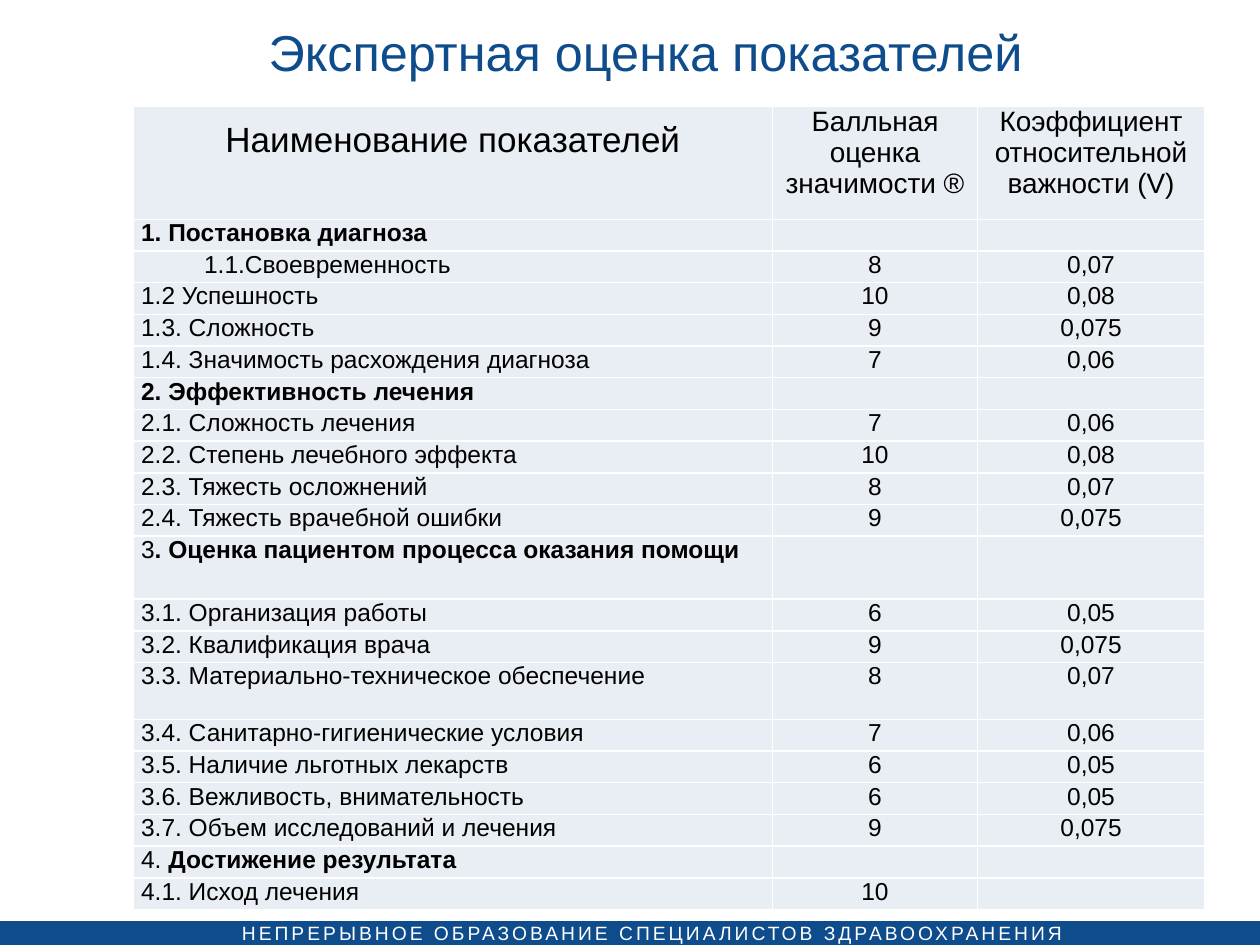
import dataclasses

import pptx
import pptx.dml.color
import pptx.enum.shapes
import pptx.enum.text
import pptx.oxml
import pptx.oxml.ns
import pptx.util

ALIGN = pptx.enum.text.PP_ALIGN
MID = pptx.enum.text.MSO_ANCHOR.MIDDLE
BLUE, WHITE, BLACK, PALE = "0F4C8B", "FFFFFF", "000000", "E9EDF4"

# Page grid: 1000 columns by 750 rows
COLS, ROWS = 1000, 750
deck = pptx.Presentation()
deck.slide_width = pptx.util.Inches(10)
deck.slide_height = pptx.util.Inches(7.5)


def col(n: float) -> int:
    return round(deck.slide_width * n / COLS)


def row(n: float) -> int:
    return round(deck.slide_height * n / ROWS)


def box(x: float, y: float, w: float, h: float) -> tuple[int, int, int, int]:
    return col(x), row(y), col(w), row(h)


def tint(code: str) -> pptx.dml.color.RGBColor:
    return pptx.dml.color.RGBColor.from_string(code)


def fill(part, code: str) -> None:
    part.fill.solid()
    part.fill.fore_color.rgb = tint(code)


def apply(part, form: dict) -> None:
    for key, val in form.items():
        setattr(part, key, val)


def write(para, text: str, size: float, code: str = BLACK, bold: bool = False):
    run = para.add_run()
    run.text = text
    apply(run.font, {"name": "Arial", "size": pptx.util.Pt(size), "bold": bold})
    run.font.color.rgb = tint(code)
    return run


@dataclasses.dataclass
class Line:
    """One table row: plain text, bold text, score, weight."""
    plain: str = ""
    bold: str = ""
    score: str = ""
    weight: str = ""
    tall: float = 0
    indent: float = 0


HEADS = [("Наименование показателей", 20, 12),
         ("Балльная оценка значимости ®", 16, 0),
         ("Коэффициент относительной важности (V)", 16, 0)]
LINES = [
    Line(bold="1. Постановка диагноза"),
    Line("1.1.Своевременность", "", "8", "0,07", indent=50),
    Line("1.2 Успешность", "", "10", "0,08"),
    Line("1.3. Сложность", "", "9", "0,075"),
    Line("1.4. Значимость расхождения диагноза", "", "7", "0,06"),
    Line(bold="2. Эффективность лечения"),
    Line("2.1. Сложность лечения", "", "7", "0,06"),
    Line("2.2. Степень лечебного эффекта", "", "10", "0,08"),
    Line("2.3. Тяжесть осложнений", "", "8", "0,07"),
    Line("2.4. Тяжесть врачебной ошибки", "", "9", "0,075"),
    Line("3", ". Оценка пациентом процесса оказания помощи", tall=50),
    Line("3.1. Организация работы", "", "6", "0,05"),
    Line("3.2. Квалификация врача", "", "9", "0,075"),
    Line("3.3. Материально-техническое обеспечение", "", "8", "0,07", tall=45),
    Line("3.4. Санитарно-гигиенические условия", "", "7", "0,06"),
    Line("3.5. Наличие льготных лекарств", "", "6", "0,05"),
    Line("3.6. Вежливость, внимательность", "", "6", "0,05"),
    Line("3.7. Объем исследований и лечения", "", "9", "0,075"),
    Line("4. ", "Достижение результата"),
    Line("4.1. Исход лечения", "", "10"),
]
WIDTHS = [507, 163, 180]
HIGH, HEAD = 638, 90


def style(cell, top: float = 0) -> None:
    """Set insets, white borders and the pale fill of a cell."""
    apply(cell, {"margin_left": col(6), "margin_right": col(6),
                 "margin_top": row(top), "margin_bottom": 0})
    props = cell._tc.get_or_add_tcPr()
    space = pptx.oxml.ns.nsdecls("a")
    for side in "LRTB":
        props.append(pptx.oxml.parse_xml(
            f'<a:ln{side} {space} w="12700"><a:solidFill>'
            f'<a:srgbClr val="{WHITE}"/></a:solidFill></a:ln{side}>'))
    fill(cell, PALE)


def enter(cell, plain: str, bold: str = "", align=ALIGN.CENTER,
          size: float = 14):
    para = cell.text_frame.paragraphs[0]
    para.alignment = align
    for text, thick in ((plain, False), (bold, True)):
        if text:
            write(para, text, size, bold=thick)
    if not plain and not bold:
        # An empty cell keeps the small line height
        para._p.append(pptx.oxml.parse_xml(
            f'<a:endParaRPr {pptx.oxml.ns.nsdecls("a")} sz="{size * 100}"/>'))
    return para


def draw_table(slide) -> None:
    table = slide.shapes.add_table(
        len(LINES) + 1, len(WIDTHS), *box(106, 84, sum(WIDTHS), HIGH)).table
    for part, wide in zip(table.columns, WIDTHS):
        part.width = col(wide)
    # Rows without a height of their own share what is left
    low = [line for line in LINES if not line.tall]
    step = (HIGH - HEAD - sum(line.tall for line in LINES)) / len(low)
    table.rows[0].height = row(HEAD)
    for i, (text, size, top) in enumerate(HEADS):
        style(table.cell(0, i), top)
        enter(table.cell(0, i), text, size=size)
    for i, line in enumerate(LINES, 1):
        table.rows[i].height = row(line.tall or step)
        name, score, weight = table.rows[i].cells
        for cell in (name, score, weight):
            style(cell)
        para = enter(name, line.plain, line.bold, ALIGN.JUSTIFY)
        if line.indent:
            para.level = 1
            apply_pos = para._p.get_or_add_pPr()
            apply_pos.set("marL", str(col(line.indent)))
            apply_pos.set("indent", "0")
        enter(score, line.score)
        enter(weight, line.weight)


def draw_foot(slide) -> None:
    band = slide.shapes.add_shape(
        pptx.enum.shapes.MSO_SHAPE.RECTANGLE, *box(-4, 731, 1004, 22))
    band.shadow.inherit = False
    fill(band, BLUE)
    band.line.fill.background()
    frame = slide.shapes.add_textbox(*box(192, 731, 663, 19)).text_frame
    apply(frame, {"margin_left": 0, "margin_right": 0, "margin_top": 0,
                  "margin_bottom": 0, "word_wrap": True})
    run = write(frame.paragraphs[0],
                "НЕПРЕРЫВНОЕ ОБРАЗОВАНИЕ СПЕЦИАЛИСТОВ ЗДРАВООХРАНЕНИЯ",
                11, WHITE)
    run.font._element.set("spc", "170")


def draw_title(slide) -> None:
    frame = slide.shapes.add_textbox(*box(75, 13, 875, 55)).text_frame
    apply(frame, {"word_wrap": True, "vertical_anchor": MID})
    frame.paragraphs[0].alignment = ALIGN.CENTER
    write(frame.paragraphs[0], "Экспертная оценка показателей", 28.8, BLUE)


def main() -> None:
    slide = deck.slides.add_slide(deck.slide_layouts[6])
    draw_foot(slide)
    draw_table(slide)
    draw_title(slide)
    deck.save("out.pptx")


if __name__ == "__main__":
    main()
